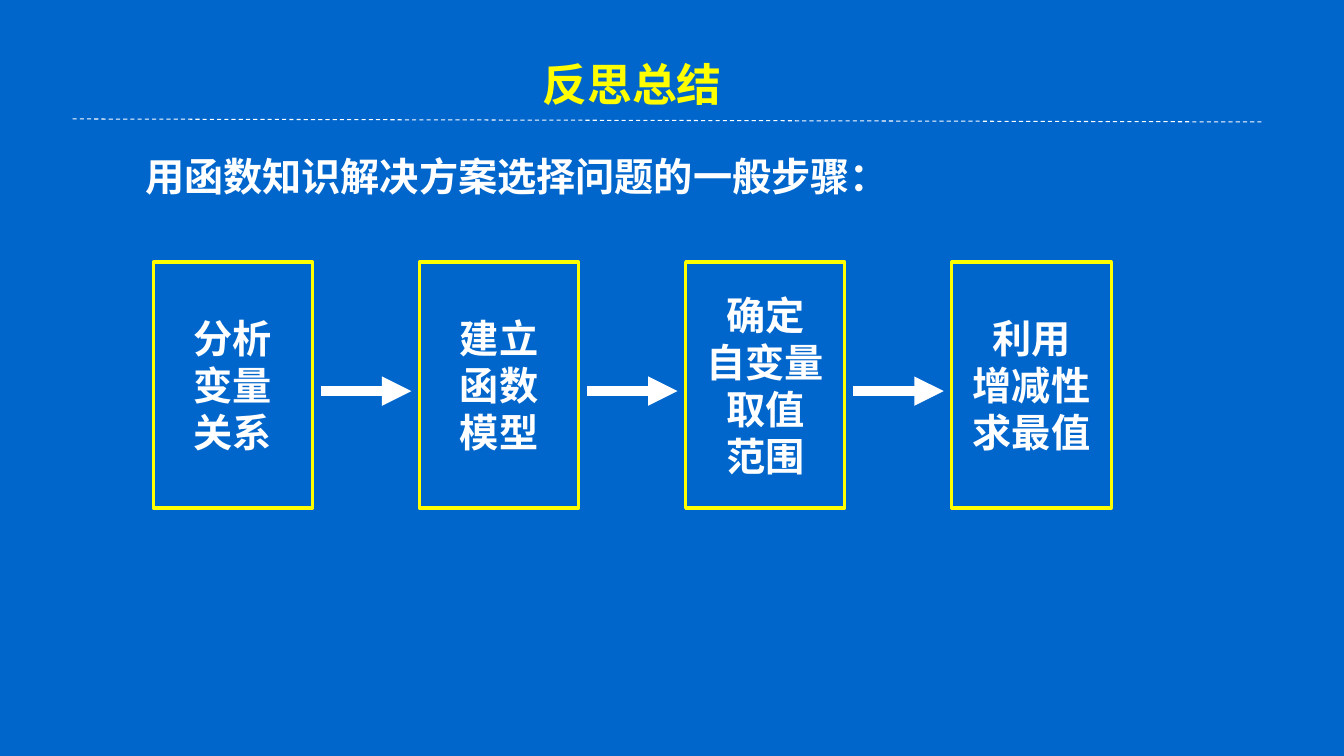
from pptx import Presentation
from pptx.dml.color import RGBColor
from pptx.enum.dml import MSO_LINE
from pptx.enum.shapes import MSO_CONNECTOR, MSO_SHAPE
from pptx.enum.text import MSO_ANCHOR, MSO_AUTO_SIZE, PP_ALIGN
from pptx.oxml.ns import qn
from pptx.util import Inches, Pt
from lxml import etree

# Content
TITLE = "反思总结"
INTRO = "用函数知识解决方案选择问题的一般步骤："
STEPS = [
    ["分析", "变量", "关系"],
    ["建立", "函数", "模型"],
    ["确定", "自变量", "取值", "范围"],
    ["利用", "增减性", "求最值"],
]

THEME = {
    "background": RGBColor(0x00, 0x66, 0xCC),
    "accent": RGBColor(0xFF, 0xFF, 0x00),
    "text": RGBColor(0xFF, 0xFF, 0xFF),
    "font": "Noto Sans CJK SC",
    "intro_font": "Calibri",
    "title_size": 32,
    "body_size": 28,
}

# Layout in inches
BOX_LEFT, BOX_TOP, BOX_WIDTH, BOX_HEIGHT = 1.52, 2.6, 1.58, 2.44
BOX_PITCH = 2.64
ARROW_GAP, ARROW_Y = 0.08, 3.88


def write_text(shape, lines, size=THEME["body_size"], color=THEME["text"],
               font=THEME["font"], align=PP_ALIGN.CENTER, anchor=MSO_ANCHOR.TOP):
    frame = shape.text_frame
    frame.word_wrap = False
    frame.vertical_anchor = anchor
    for index, line in enumerate(lines):
        paragraph = frame.add_paragraph() if index else frame.paragraphs[0]
        paragraph.alignment = align
        run = paragraph.add_run()
        run.text = line
        run.font.name = font
        run.font.size = Pt(size)
        run.font.bold = True
        run.font.color.rgb = color


def add_label(slide, box, text, **text_format):
    shape = slide.shapes.add_textbox(*map(Inches, box))
    write_text(shape, [text], **text_format)
    shape.text_frame.auto_size = MSO_AUTO_SIZE.SHAPE_TO_FIT_TEXT


def add_line(slide, start, end, width, dashed=False, arrow=False):
    line = slide.shapes.add_connector(
        MSO_CONNECTOR.STRAIGHT, *map(Inches, (*start, *end)))
    line.line.color.rgb = THEME["text"]
    line.line.width = Pt(width)
    if dashed:
        line.line.dash_style = MSO_LINE.DASH
    if arrow:
        outline = line.line._get_or_add_ln()
        etree.SubElement(outline, qn("a:tailEnd"), type="triangle")
    etree.SubElement(line._element.spPr, qn("a:effectLst"))


def add_step(slide, left, lines):
    box = slide.shapes.add_shape(
        MSO_SHAPE.RECTANGLE, *map(Inches, (left, BOX_TOP, BOX_WIDTH, BOX_HEIGHT)))
    box.shadow.inherit = False
    box.fill.background()
    box.line.color.rgb = THEME["accent"]
    box.line.width = Pt(2.25)
    write_text(box, lines, anchor=MSO_ANCHOR.MIDDLE)


def main():
    presentation = Presentation()
    presentation.slide_width = Inches(13.33)
    presentation.slide_height = Inches(7.5)
    slide = presentation.slides.add_slide(presentation.slide_layouts[6])
    slide.background.fill.solid()
    slide.background.fill.fore_color.rgb = THEME["background"]

    # Heading
    add_line(slide, (0.72, 1.18), (12.54, 1.21), 0.75, dashed=True)
    add_label(slide, (5.27, 0.51, 2, 0.64), TITLE,
              size=THEME["title_size"], color=THEME["accent"])
    add_label(slide, (1.34, 1.46, 7.66, 0.57), INTRO,
              font=THEME["intro_font"], align=PP_ALIGN.LEFT)

    # Steps, with an arrow between neighbours
    for index, lines in enumerate(STEPS):
        left = BOX_LEFT + index * BOX_PITCH
        add_step(slide, left, lines)
        if index:
            add_line(slide, (left - BOX_PITCH + BOX_WIDTH + ARROW_GAP, ARROW_Y),
                     (left - ARROW_GAP, ARROW_Y), 7, arrow=True)

    presentation.save("out.pptx")


if __name__ == "__main__":
    main()
